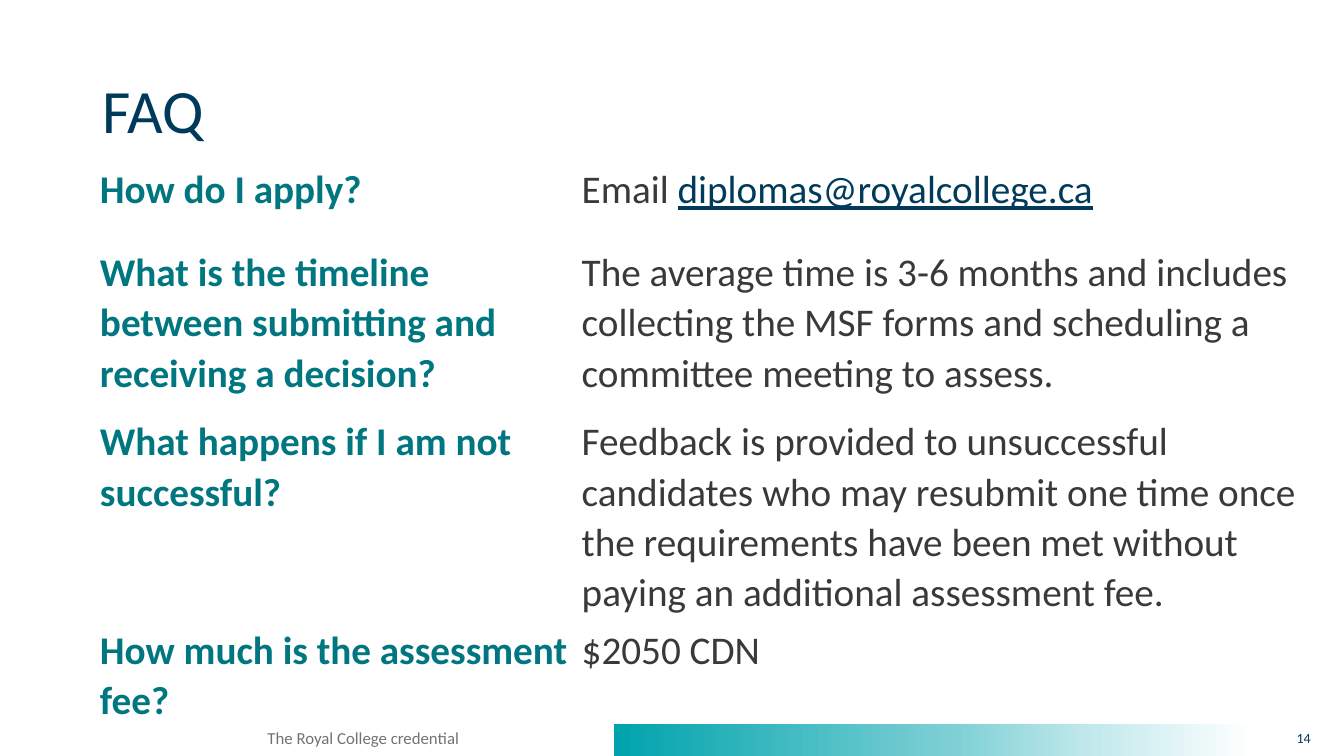
from dataclasses import dataclass
from lxml.etree import SubElement as Sub
from pptx import Presentation
from pptx.dml.color import RGBColor as Rgb
from pptx.enum.shapes import MSO_SHAPE as Kind
from pptx.enum.text import MSO_ANCHOR as Anchor, PP_ALIGN as Align
from pptx.oxml.ns import qn
from pptx.util import Cm, Pt


@dataclass(frozen=True)
class Theme:
    font: str = "Calibri"
    navy: str = "003A5B"
    link: str = "003B5C"
    teal: str = "007680"
    dark: str = "3B3838"
    grey: str = "767171"
    white: str = "FFFFFF"
    fade: tuple = ((0, "00A3AD"), (54, "80D1D6"), (74, "C0E8EB"), (100, "FFFFFF"))
    title: int = 44
    body: int = 28
    foot: int = 12
    page: int = 10


def tint(parent, color):
    Sub(parent, qn("a:srgbClr"), val=color)


class Deck:
    def __init__(self, theme):
        self.theme = theme
        self.show = Presentation()
        self.show.slide_width, self.show.slide_height = Cm(33.87), Cm(19.05)
        self.slide = self.show.slides.add_slide(self.show.slide_layouts[6])

    def run(self, para, text, size, color, bold=False, under=False):
        run = para.add_run()
        run.text = text
        font = run.font
        font.name, font.size = self.theme.font, Pt(size)
        font.bold, font.underline = bold, under
        font.color.rgb = Rgb.from_string(color)

    def text(self, box, text, size, color, align=Align.LEFT, space=1.0):
        frame = self.slide.shapes.add_textbox(*map(Cm, box)).text_frame
        frame.word_wrap = True
        frame.vertical_anchor = Anchor.MIDDLE
        para = frame.paragraphs[0]
        para.alignment, para.line_spacing = align, space
        self.run(para, text, size, color)

    def bar(self, box, stops):
        bar = self.slide.shapes.add_shape(Kind.RECTANGLE, *map(Cm, box))
        bar.shadow.inherit = False
        bar.line.fill.background()
        bar.fill.gradient()
        bar.fill.gradient_angle = 0
        # Swap the preset stops for the theme's fade
        group = bar.element.spPr.find(qn("a:gradFill")).find(qn("a:gsLst"))
        group.clear()
        for spot, color in stops:
            tint(Sub(group, qn("a:gs"), pos=str(spot * 1000)), color)

    def edge(self, cell, base):
        props = cell._tc.get_or_add_tcPr()
        for at, side in enumerate("LRTB"):
            width = Pt(base if side == "B" else 1)
            line = Sub(props, qn("a:ln" + side), w=str(width))
            tint(Sub(line, qn("a:solidFill")), self.theme.white)
            props.insert(at, line)

    def cell(self, cell, runs, after, base):
        cell.fill.background()
        cell.margin_left = cell.margin_right = Cm(0.18)
        cell.margin_top = cell.margin_bottom = 0
        para = cell.text_frame.paragraphs[0]
        para.line_spacing, para.space_after = 1.05, Pt(after)
        for text, color, *style in runs:
            self.run(para, text, self.theme.body, color, *style)
        self.edge(cell, base)

    def table(self, box, cols, rows, data):
        frame = self.slide.shapes.add_table(len(rows), len(cols), *map(Cm, box))
        table = frame.table
        table.first_row = table.horz_banding = False
        for col, width in zip(table.columns, cols):
            col.width = Cm(width)
        for at, (high, line) in enumerate(zip(rows, data)):
            table.rows[at].height = Cm(high)
            for spot, (runs, after) in enumerate(line):
                self.cell(table.cell(at, spot), runs, after, 1 if at else 3)


def main():
    theme = Theme()
    deck = Deck(theme)

    # Footer band
    deck.bar((15.47, 18.21, 16.08, 0.84), theme.fade)
    deck.text((3.58, 18.14, 11.25, 0.89), "The Royal College credential ",
              theme.foot, theme.grey, Align.CENTER)
    deck.text((31.55, 18.14, 1.73, 0.89), "14", theme.page, theme.navy, Align.RIGHT)

    # Title
    deck.text((2.34, 1.02, 29.21, 3.68), "FAQ", theme.title, theme.navy, space=0.9)

    # Questions and answers, each with its space after
    def ask(text, after=0):
        return [(text, theme.teal, True)], after

    def tell(text, after=8):
        return [(text, theme.dark)], after

    mail = [("Email ", theme.dark),
            ("diplomas@royalcollege.ca", theme.link, False, True)]
    data = [
        (ask("How do I apply?"), (mail, 8)),
        (ask("What is the timeline between submitting and receiving a decision?"),
         tell("The average time is 3-6 months and includes collecting the MSF "
              "forms and scheduling a committee meeting to assess.")),
        (ask("What happens if I am not successful?"),
         tell("Feedback is provided to unsuccessful candidates who may resubmit "
              "one time once the requirements have been met without paying an "
              "additional assessment fee.")),
        (ask("How much is the assessment fee?", 8), tell("$2050 CDN", 0)),
    ]
    deck.table((2.34, 4.14, 31.06, 13.97), (12.14, 18.92),
               (2.08, 4.27, 5.26, 2.36), data)

    deck.show.save("out.pptx")


if __name__ == "__main__":
    main()
